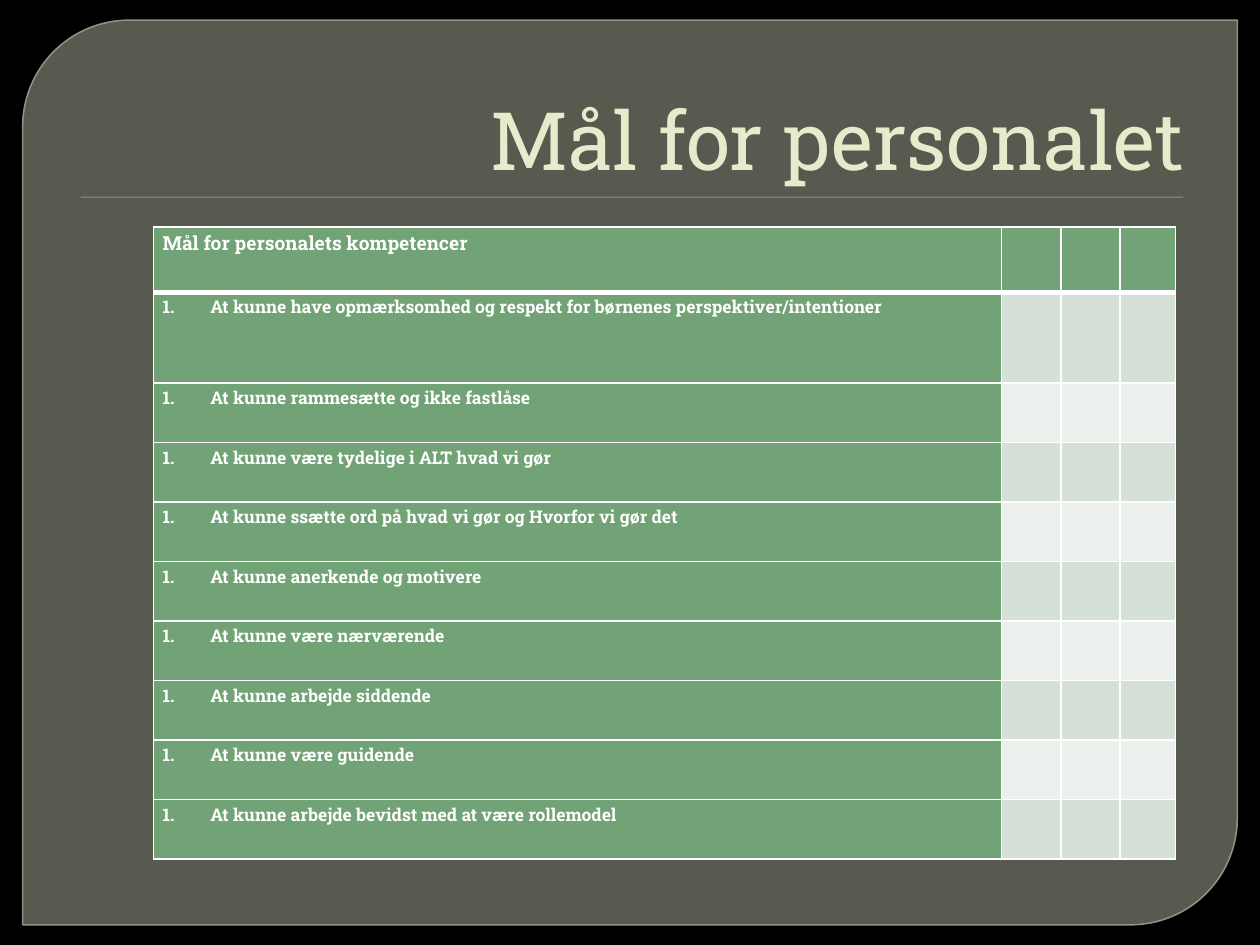
from lxml import etree
from pptx import Presentation
from pptx import util as u
from pptx.dml.color import RGBColor
from pptx.enum import shapes, text
from pptx.oxml.ns import qn

GOALS = [
    "At kunne have opmærksomhed og respekt for børnenes perspektiver/intentioner",
    "At kunne rammesætte og ikke fastlåse",
    "At kunne være tydelige i ALT hvad vi gør",
    "At kunne ssætte ord på hvad vi gør og Hvorfor vi gør det",
    "At kunne anerkende og motivere",
    "At kunne være nærværende",
    "At kunne arbejde siddende",
    "At kunne være guidende",
    "At kunne arbejde bevidst med at være rollemodel",
]
GREEN, WHITE = "72A376", "FFFFFF"
BANDS = ["D5E0D6", "EBF0EC"]


def rgb(hex_colour):
    return RGBColor.from_string(hex_colour)


def add_xml(parent, tag, **attributes):
    return etree.SubElement(parent, qn(tag), attributes)


def add_colour(parent, hex_colour):
    return add_xml(parent, "a:srgbClr", val=hex_colour)


def set_opacity(element, percent):
    """Make the first solid colour inside the element partly transparent."""
    colour = next(element.iter(qn("a:srgbClr")))
    add_xml(colour, "a:alpha", val=str(percent * 1000))


class GoalSlide:
    """Style and slide; lengths are cells of a 100 by 75 grid."""

    font = "Roboto Slab"
    columns, rows = 100, 75

    def __init__(self, deck):
        self.cell_width = deck.slide_width / self.columns
        self.cell_height = deck.slide_height / self.rows
        self.slide = deck.slides.add_slide(deck.slide_layouts[5])
        background = self.slide.background.fill
        background.solid()
        background.fore_color.rgb = rgb("000000")

    def across(self, columns):
        return round(columns * self.cell_width)

    def down(self, rows):
        return round(rows * self.cell_height)

    def box(self, left, top, width, height):
        return self.across(left), self.down(top), self.across(width), self.down(height)

    def style(self, paragraph, size, colour, bold=False):
        font = paragraph.font
        font.name, font.size, font.bold = self.font, u.Pt(size), bold
        font.color.rgb = rgb(colour)

    def shape(self, kind, place, colour):
        shape = self.slide.shapes.add_shape(kind, *self.box(*place))
        shape.shadow.inherit = False
        shape.fill.solid()
        shape.fill.fore_color.rgb = rgb(colour)
        shape.line.fill.background()
        return shape

    def panel(self, place):
        panel = self.shape(shapes.MSO_SHAPE.ROUND_2_DIAG_RECTANGLE, place, "888B7B")
        panel.adjustments[0], panel.adjustments[1] = 0.118, 0
        set_opacity(panel.element.spPr, 65)
        panel.line.color.rgb = rgb("9DA090")
        panel.line.width = u.Pt(0.87)
        set_opacity(panel.element.spPr.find(qn("a:ln")), 88)

    def rule(self, place):
        rule = self.shape(shapes.MSO_SHAPE.RECTANGLE, place, GREEN)
        effects = rule.element.spPr.find(qn("a:effectLst"))
        shadow = add_xml(effects, "a:outerShdw", blurRad=str(u.Pt(1)),
                         dist=str(u.Pt(1)), dir="5400000")
        add_colour(shadow, "000000")
        set_opacity(shadow, 75)

    def title(self, wording, place):
        title = self.slide.shapes.title
        title.element.getparent().append(title.element)  # in front of the panel
        title.left, title.top, title.width, title.height = self.box(*place)
        title.text_frame.text = wording
        title.text_frame.vertical_anchor = text.MSO_ANCHOR.BOTTOM
        heading = title.text_frame.paragraphs[0]
        heading.alignment = text.PP_ALIGN.RIGHT
        self.style(heading, 46, "E7EACB")

    def cell(self, cell, colour, top=1, bottom=1):
        """Fill a table cell and draw its white borders, widths in points."""
        cell.margin_left = cell.margin_right = u.Inches(0.07)
        cell.margin_top = cell.margin_bottom = 0
        properties = cell._tc.get_or_add_tcPr()
        for side, width in zip("LRTB", (1, 1, top, bottom)):
            border = add_xml(properties, f"a:ln{side}", w=str(u.Pt(width)))
            add_colour(add_xml(border, "a:solidFill"), WHITE)
        cell.fill.solid()
        cell.fill.fore_color.rgb = rgb(colour)

    def label(self, cell, wording, size, numbered):
        cell.text = wording
        paragraph = cell.text_frame.paragraphs[0]
        paragraph.line_spacing = 1.15
        self.style(paragraph, size, WHITE, bold=True)
        if numbered:
            properties = paragraph._p.get_or_add_pPr()
            indent = u.Inches(0.38)
            properties.set("marL", str(indent))
            properties.set("indent", str(-indent))
            add_xml(properties, "a:buAutoNum", type="arabicPeriod")

    def goal_table(self, heading, goals, place, check_widths, first_heights):
        labels = [heading, *goals]
        frame = self.slide.shapes.add_table(
            len(labels), 1 + len(check_widths), *self.box(*place))
        table = frame.table
        table.first_row = table.horz_banding = False
        widths = [place[2] - sum(check_widths), *check_widths]
        for column, width in zip(table.columns, widths):
            column.width = self.across(width)
        other_rows = len(labels) - len(first_heights)
        other_height = (place[3] - sum(first_heights)) / other_rows
        heights = [*first_heights, *[other_height] * other_rows]
        for number, (row, height) in enumerate(zip(table.rows, heights)):
            row.height = self.down(height)
            is_heading = number == 0
            band = GREEN if is_heading else BANDS[(number - 1) % 2]
            for position, cell in enumerate(row.cells):
                self.cell(cell, band if position else GREEN,
                          top=3 if number == 1 else 1,
                          bottom=3 if is_heading else 1)
            self.label(row.cells[0], labels[number], 11 if is_heading else 10,
                       numbered=not is_heading)


def main():
    deck = Presentation()
    deck.slide_width, deck.slide_height = u.Inches(10), u.Inches(7.5)
    goals = GoalSlide(deck)
    goals.panel((1.8, 1.6, 96.4, 71.8))
    goals.rule((6.4, 15.6, 87.5, 0.1))
    goals.title("Mål for personalet", (5, 2.8, 90, 12.5))
    goals.goal_table("Mål for personalets kompetencer", GOALS,
                     place=(12.2, 18, 81.1, 50.2),
                     check_widths=(4.7, 4.7, 4.4), first_heights=(5.2, 7.2))
    deck.save("out.pptx")


if __name__ == "__main__":
    main()
